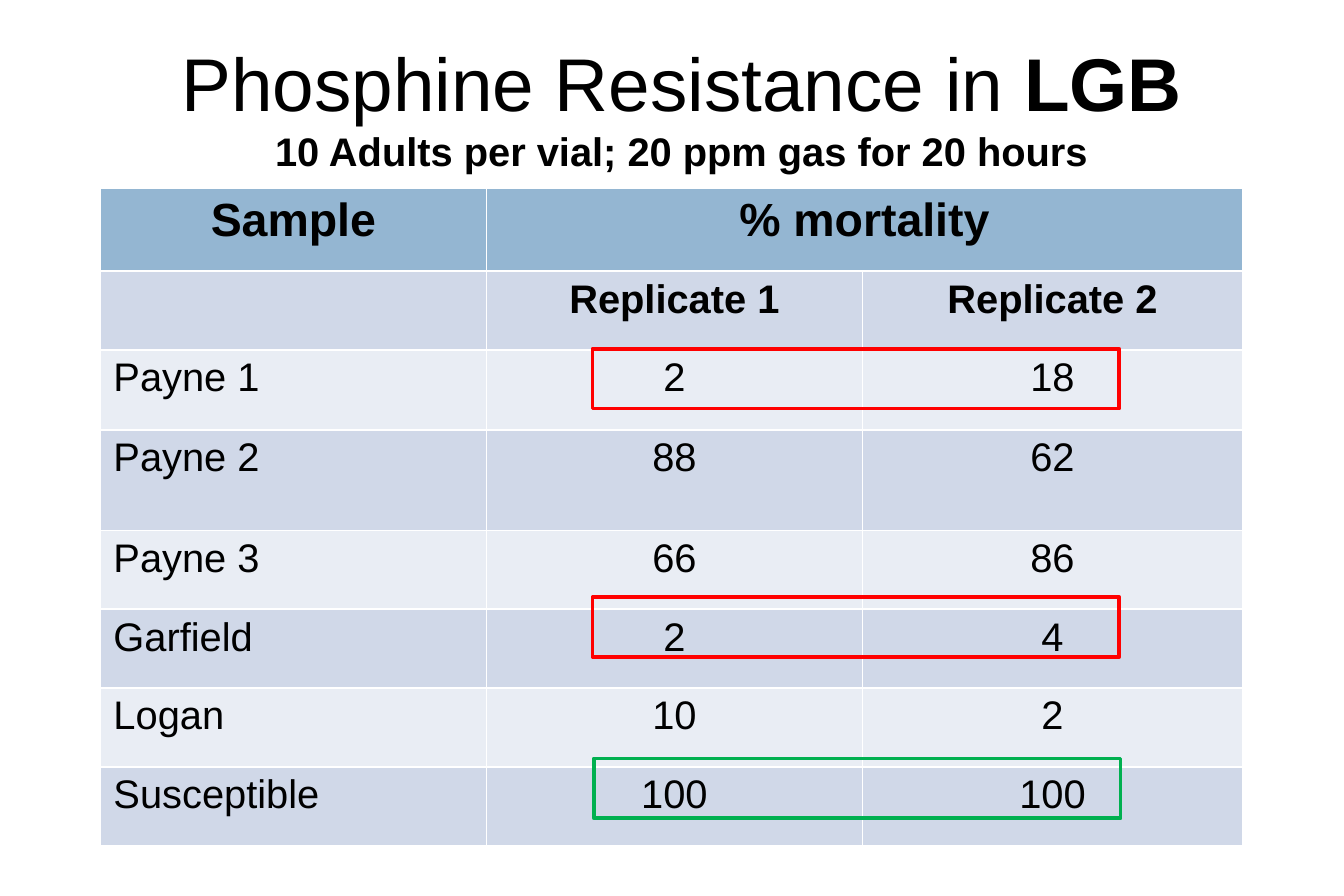
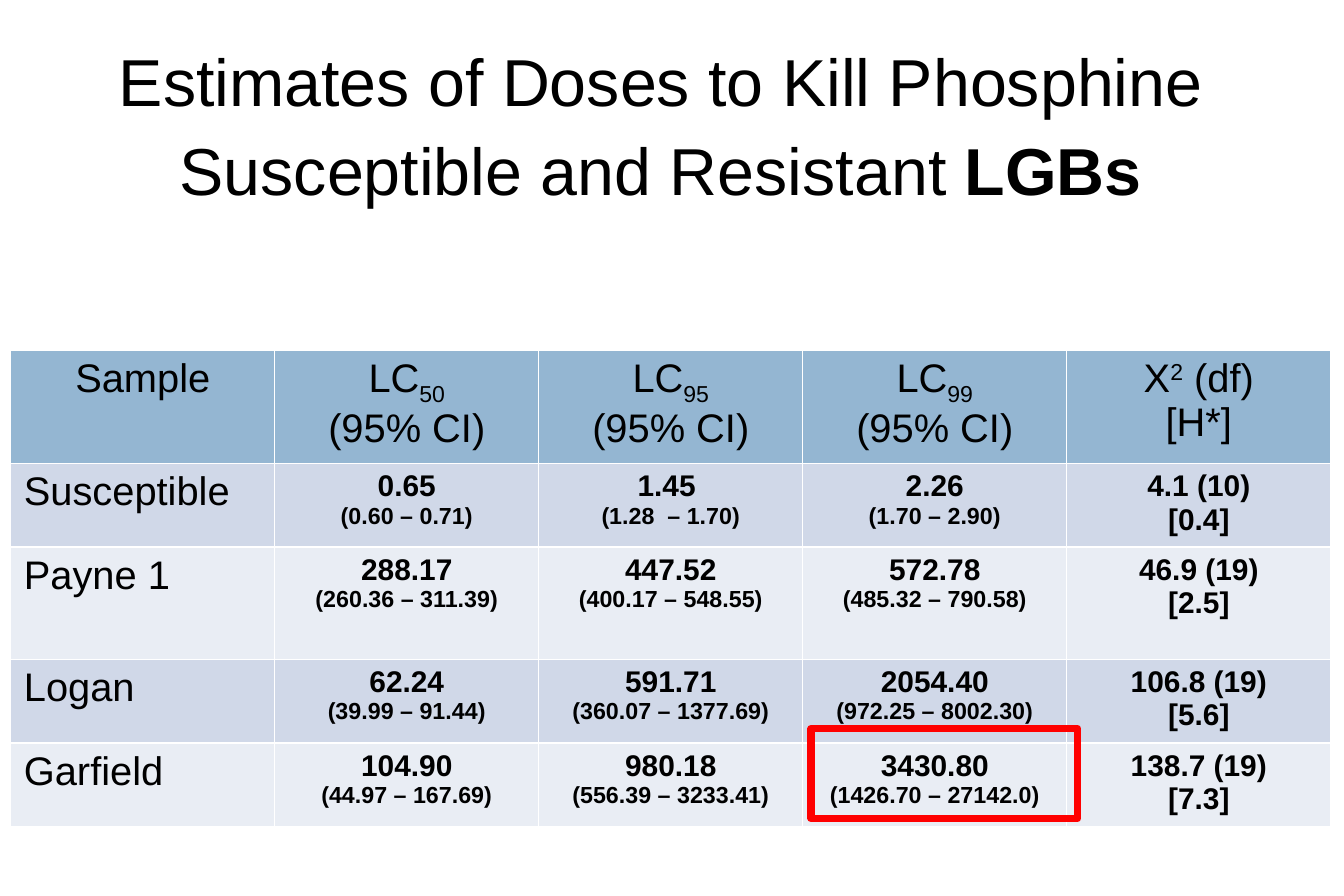
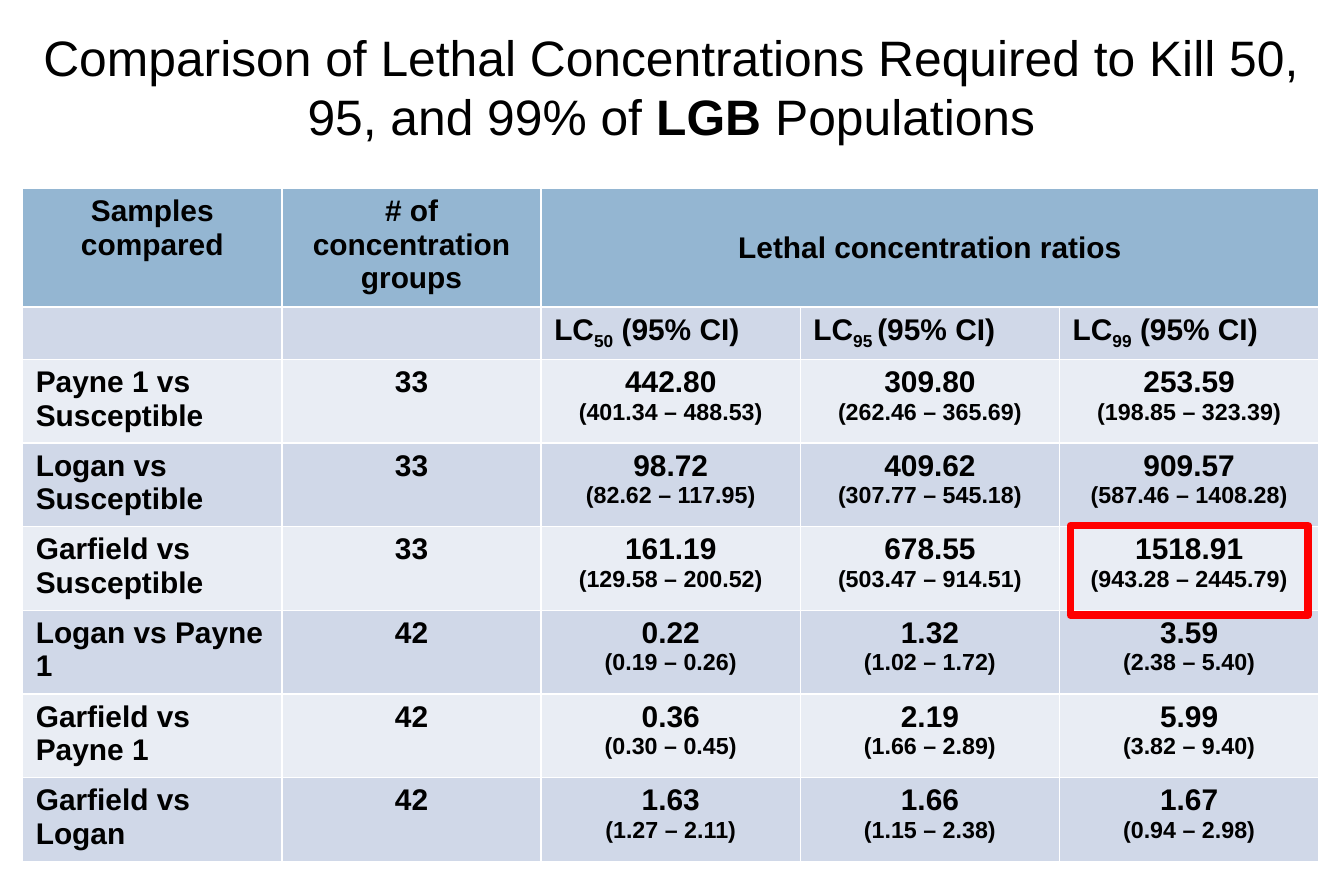
import dataclasses

import pptx
import pptx.dml.color
import pptx.enum.shapes
import pptx.enum.text
import pptx.util

Inches = pptx.util.Inches
Pt = pptx.util.Pt
ALIGN = pptx.enum.text.PP_ALIGN
ANCHOR = pptx.enum.text.MSO_ANCHOR


def rgb(code):
    return pptx.dml.color.RGBColor.from_string(code)


@dataclasses.dataclass(frozen=True)
class Theme:
    font: str = "Arial"
    ink: str = "000000"
    head: str = "94B6D2"
    bands: tuple = ("E9EDF4", "D0D8E8")
    red: str = "FF0000"
    green: str = "00B050"
    large: int = 28
    text: int = 24
    small: int = 18
    tiny: int = 14


THEME = Theme()


def write(para, line, size, bold=False, align=ALIGN.CENTER):
    """Fill a paragraph; pieces split by | may start with * bold, _ sub or ^ super."""
    para.alignment = align
    for piece in line.split("|"):
        mark = piece[0] if piece[0] in "*_^" else ""
        run = para.add_run()
        run.text = piece[len(mark):]
        font = run.font
        font.name, font.size = THEME.font, Pt(size)
        font.bold = bold or mark == "*"
        font.color.rgb = rgb(THEME.ink)
        if mark in ("_", "^"):
            shift = "-25000" if mark == "_" else "30000"
            run._r.get_or_add_rPr().set("baseline", shift)


def fill_frame(frame, lines):
    """Write one paragraph for each (line, size, bold, align) entry."""
    for i, line in enumerate(lines):
        para = frame.paragraphs[0] if i == 0 else frame.add_paragraph()
        write(para, *line)


def add_title(slide, box, lines, pitch=None):
    title = slide.shapes.title
    title.left, title.top, title.width, title.height = map(Inches, box)
    frame = title.text_frame
    frame.word_wrap = True
    frame.auto_size = pptx.enum.text.MSO_AUTO_SIZE.NONE
    frame.vertical_anchor = ANCHOR.BOTTOM
    fill_frame(frame, lines)
    if pitch:
        for para in frame.paragraphs:
            para.line_spacing = Pt(pitch)


def add_grid(slide, spot, cols, rows, data, look):
    """Add a banded table; None joins a cell to its left neighbour.

    look(row, col) gives the size, weight and alignment of a cell.
    """
    left, top = spot
    grid = slide.shapes.add_table(
        len(rows), len(cols), Inches(left), Inches(top),
        Inches(sum(cols)), Inches(sum(rows))).table
    for col, width in zip(grid.columns, cols):
        col.width = Inches(width)
    for row, height in zip(grid.rows, rows):
        row.height = Inches(height)
    for r, texts in enumerate(data):
        for c, text in enumerate(texts):
            cell = grid.cell(r, c)
            cell.margin_left = cell.margin_right = Inches(0.11)
            cell.fill.solid()
            cell.fill.fore_color.rgb = rgb(THEME.bands[r % 2] if r else THEME.head)
            if text:
                size, bold, align = look(r, c)
                fill_frame(cell.text_frame, [
                    (line, THEME.tiny if r and line[0] == "(" else size, bold, align)
                    for line in text.split("\n")])
        if None in texts:
            start = texts.index(None) - 1
            grid.cell(r, start).merge(grid.cell(r, len(cols) - 1))
            grid.cell(r, start).vertical_anchor = ANCHOR.MIDDLE if len(cols) > 3 else ANCHOR.TOP


def add_frame(slide, box, color, width):
    frame = slide.shapes.add_shape(
        pptx.enum.shapes.MSO_SHAPE.RECTANGLE, *map(Inches, box))
    frame.shadow.inherit = False
    frame.fill.background()
    frame.line.color.rgb = rgb(color)
    frame.line.width = Pt(width)


def side(row, col):
    """Row names sit left, everything else is centred."""
    return ALIGN.LEFT if row and col == 0 else ALIGN.CENTER


def make_deaths(slide):
    add_title(slide, (0.22, 0.25, 10.97, 1.26), [
        ("Phosphine Resistance in |*LGB", 45),
        ("10 Adults per vial; 20 ppm gas for 20 hours", THEME.text, True)])
    data = [
        ("Sample", "% mortality", None),
        ("", "Replicate 1", "Replicate 2"),
        ("Payne 1", "2", "18"),
        ("Payne 2", "88", "62"),
        ("Payne 3", "66", "86"),
        ("Garfield", "2", "4"),
        ("Logan", "10", "2"),
        ("Susceptible", "100", "100"),
    ]
    rows = [0.69, 0.66, 0.67, 0.84] + [0.66] * 4

    def look(r, c):
        return THEME.text if r else THEME.large, r < 2, side(r, c)

    add_grid(slide, (0.84, 1.58), (3.23, 3.15, 3.18), rows, data, look)
    for left, top, color in ((4.97, 6.35, THEME.green),
                             (4.96, 2.92, THEME.red), (4.96, 5, THEME.red)):
        add_frame(slide, (left, top, 4.41, 0.5), color, 2.25)


def make_doses(slide):
    add_title(slide, (0, -0.17, 11.06, 1.97), [
        ("Estimates of Doses to Kill Phosphine Susceptible and Resistant |*LGBs", 40)],
        pitch=54)
    heads = [f"LC|_{level}\n(95% CI)" for level in (50, 95, 99)]
    data = [
        ("Sample", *heads, "Χ|^2| (df)\n[H*]"),
        ("Susceptible", "0.65\n(0.60 – 0.71)", "1.45 \n(1.28  – 1.70)",
         "2.26\n(1.70 – 2.90)", "4.1 (10)\n[0.4]"),
        ("Payne 1", "288.17\n(260.36 – 311.39)", "447.52\n(400.17 – 548.55)",
         "572.78\n(485.32 – 790.58)", "46.9 (19)\n[2.5]"),
        ("Logan", "62.24\n(39.99 – 91.44)", "591.71\n(360.07 – 1377.69)",
         "2054.40\n(972.25 – 8002.30)", "106.8 (19)\n[5.6]"),
        ("Garfield", "104.90\n(44.97 – 167.69)", "980.18\n(556.39 – 3233.41)",
         "3430.80\n(1426.70 – 27142.0)", "138.7 (19)\n[7.3]"),
    ]

    def look(r, c):
        value = r > 0 and c > 0
        return THEME.small if value else THEME.text, value, side(r, c)

    add_grid(slide, (0.09, 2.93), [2.21] * 5, (0.95, 0.7, 0.94, 0.7, 0.7), data, look)
    add_frame(slide, (6.79, 6.1, 2.23, 0.75), THEME.red, 4.5)


def make_ratios(slide):
    add_title(slide, (0.09, 0.17, 11.06, 1.1), [
        ("Comparison of Lethal Concentrations Required to Kill 50, 95, and 99% of "
         "|*LGB |Populations", 30)])
    data = [
        ("Samples compared", "# of concentration groups",
         "Lethal concentration ratios", None, None),
        ("", "", "LC|_50| (95% CI)", "LC|_95 |(95% CI)", "LC|_99| (95% CI)"),
        ("Payne 1 vs Susceptible", "33", "442.80\n(401.34 – 488.53)",
         "309.80\n(262.46 – 365.69)", "253.59\n(198.85 – 323.39)"),
        ("Logan vs Susceptible", "33", "98.72\n(82.62 – 117.95)",
         "409.62\n(307.77 – 545.18)", "909.57\n(587.46 – 1408.28)"),
        ("Garfield vs Susceptible", "33", "161.19\n(129.58 – 200.52)",
         "678.55\n(503.47 – 914.51)", "1518.91\n(943.28 – 2445.79)"),
        ("Logan vs Payne 1", "42", "0.22\n(0.19 – 0.26)",
         "1.32\n(1.02 – 1.72)", "3.59\n(2.38 – 5.40)"),
        ("Garfield vs Payne 1", "42", "0.36\n(0.30 – 0.45)",
         "2.19\n(1.66 – 2.89)", "5.99\n(3.82 – 9.40)"),
        ("Garfield vs Logan", "42", "1.63\n(1.27 – 2.11)",
         "1.66\n(1.15 – 2.38)", "1.67\n(0.94 – 2.98)"),
    ]

    def look(r, c):
        return THEME.small, True, ALIGN.LEFT if r == 1 else side(r, c)

    add_grid(slide, (0.19, 1.58), [2.17] * 5, [0.99, 0.44] + [0.7] * 6, data, look)
    add_frame(slide, (8.96, 4.4, 1.99, 0.75), THEME.red, 4.5)


def main():
    deck = pptx.Presentation()
    deck.slide_width, deck.slide_height = Inches(11.25), Inches(7.5)
    layout = deck.slide_layouts.get_by_name("Title Only")
    for make in (make_deaths, make_doses, make_ratios):
        make(deck.slides.add_slide(layout))
    deck.save("out.pptx")


if __name__ == "__main__":
    main()
